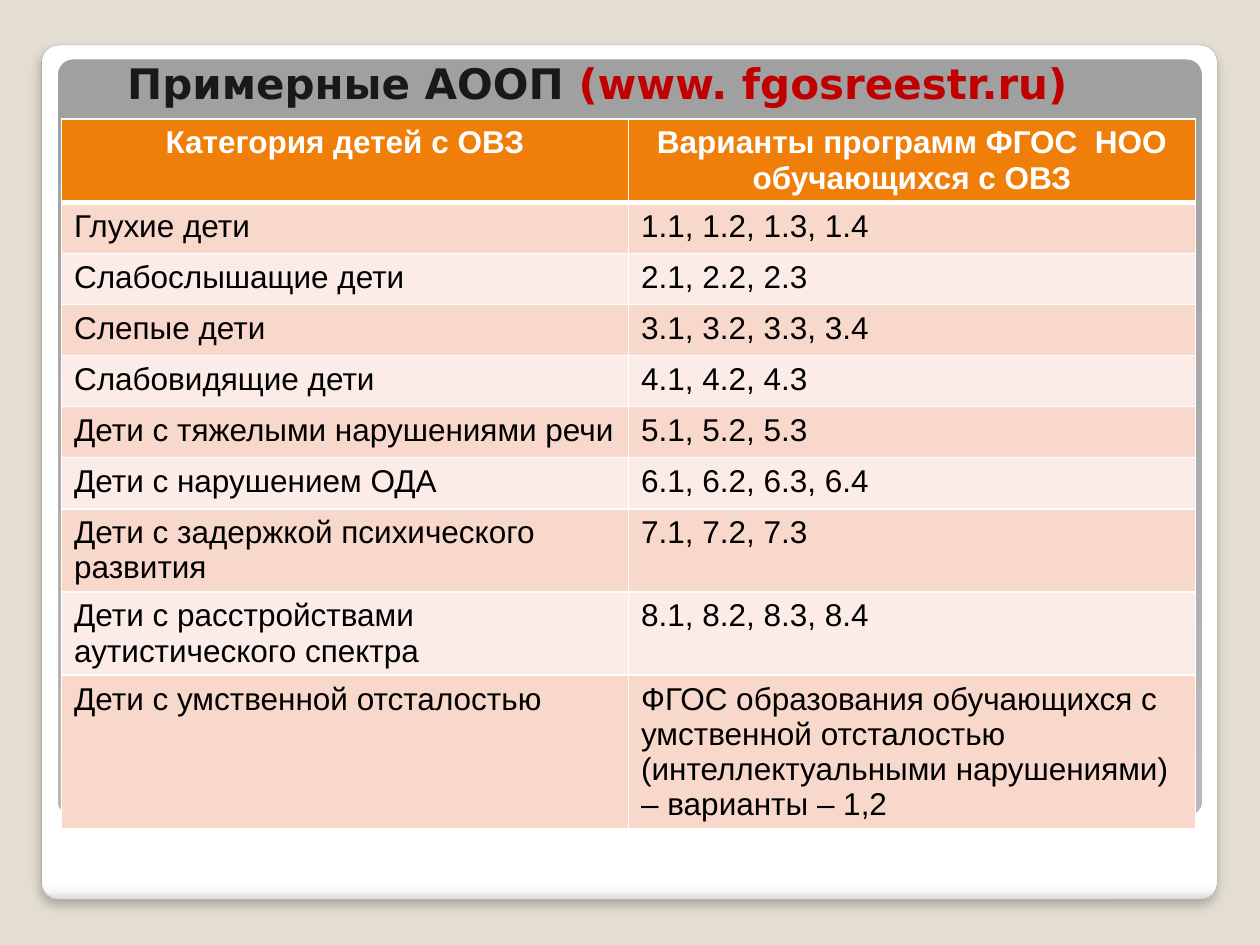
import lxml.etree
import pptx
import pptx.dml.color
import pptx.enum.shapes
import pptx.enum.text
import pptx.oxml
import pptx.oxml.ns
import pptx.util

Cm = pptx.util.Cm
Pt = pptx.util.Pt
RGBColor = pptx.dml.color.RGBColor
Align = pptx.enum.text.PP_ALIGN
qn = pptx.oxml.ns.qn

BEIGE = RGBColor(0xE3, 0xDE, 0xD1)
WHITE = RGBColor(0xFF, 0xFF, 0xFF)
OFF_WHITE = RGBColor(0xF7, 0xF7, 0xF7)
EDGE_GRAY = RGBColor(0xDA, 0xDA, 0xDA)
LINE_GRAY = RGBColor(0xA4, 0xA4, 0xA4)
PANEL_DARK = RGBColor(0xA0, 0xA0, 0xA0)
PANEL_LIGHT = RGBColor(0xB8, 0xB8, 0xB8)
BLACK = RGBColor(0, 0, 0)
CHARCOAL = RGBColor(0x19, 0x19, 0x19)
RED = RGBColor(0xC0, 0, 0)
ORANGE = RGBColor(0xF0, 0x7F, 0x09)
BAND_COLORS = (RGBColor(0xF9, 0xD8, 0xCC), RGBColor(0xFC, 0xEC, 0xE7))

ROWS = (
    ("Категория детей с ОВЗ", "Варианты программ ФГОС  НОО обучающихся с ОВЗ"),
    ("Глухие дети", "1.1, 1.2, 1.3, 1.4"),
    ("Слабослышащие дети", "2.1, 2.2, 2.3"),
    ("Слепые дети", "3.1, 3.2, 3.3, 3.4"),
    ("Слабовидящие дети", "4.1, 4.2, 4.3"),
    ("Дети с тяжелыми нарушениями речи", "5.1, 5.2, 5.3"),
    ("Дети с нарушением ОДА", "6.1, 6.2, 6.3, 6.4"),
    ("Дети с задержкой психического развития", "7.1, 7.2, 7.3"),
    ("Дети с расстройствами аутистического спектра", "8.1, 8.2, 8.3, 8.4"),
    ("Дети с умственной отсталостью",
     "ФГОС образования обучающихся с умственной отсталостью "
     "(интеллектуальными нарушениями) – варианты – 1,2"),
)


def add_run(paragraph, text, font_name, size, color, bold=False):
    run = paragraph.add_run()
    run.text = text
    run.font.name = font_name
    run.font.size = Pt(size)
    run.font.bold = bold
    run.font.color.rgb = color


def set_vertical_gradient(shape, stops):
    """Fill from top to bottom with (percent, colour) stops."""
    shape.fill.gradient()
    shape.fill.gradient_angle = 270
    stop_list = shape._element.spPr.find(".//" + qn("a:gsLst"))
    for stop in list(stop_list):
        stop_list.remove(stop)
    for percent, color in stops:
        stop = lxml.etree.SubElement(stop_list, qn("a:gs"), pos=str(percent * 1000))
        lxml.etree.SubElement(stop, qn("a:srgbClr"), val=str(color))


def add_panel(slide, left, top, width, height, stops):
    panel = slide.shapes.add_shape(
        pptx.enum.shapes.MSO_SHAPE.ROUNDED_RECTANGLE,
        Cm(left), Cm(top), Cm(width), Cm(height))
    panel.adjustments[0] = 0.02
    panel.shadow.inherit = False
    panel.line.fill.background()
    set_vertical_gradient(panel, stops)
    return panel


def add_soft_shadow(shape):
    effects = shape._element.spPr.find(qn("a:effectLst"))
    shadow = lxml.etree.SubElement(
        effects, qn("a:outerShdw"), blurRad=str(Pt(6)), dist=str(Pt(4)),
        dir="5400000", algn="t", rotWithShape="0")
    color = lxml.etree.SubElement(shadow, qn("a:srgbClr"), val=str(BLACK))
    lxml.etree.SubElement(color, qn("a:alpha"), val="25000")


def format_title(title):
    title.left, title.top = Cm(2.31), Cm(0.13)
    title.width, title.height = Cm(23.6), Cm(3.17)
    frame = title.text_frame
    frame.auto_size = pptx.enum.text.MSO_AUTO_SIZE.NONE
    frame.vertical_anchor = pptx.enum.text.MSO_ANCHOR.BOTTOM
    frame.margin_bottom = Cm(1.12)
    paragraph = frame.paragraphs[0]
    paragraph.alignment = Align.LEFT
    add_run(paragraph, "Примерные АООП ", "DejaVu Sans", 24, CHARCOAL, True)
    add_run(paragraph, "(www. fgosreestr.ru)", "DejaVu Sans", 24, RED, True)


def set_borders(cell, bottom_width):
    properties = cell._tc.get_or_add_tcPr()
    widths = (("a:lnL", 1), ("a:lnR", 1), ("a:lnT", 1), ("a:lnB", bottom_width))
    for index, (tag, width) in enumerate(widths):
        line = lxml.etree.Element(qn(tag), w=str(Pt(width)))
        fill = lxml.etree.SubElement(line, qn("a:solidFill"))
        lxml.etree.SubElement(fill, qn("a:srgbClr"), val=str(WHITE))
        properties.insert(index, line)


def format_cell(cell, text, row_index):
    header = row_index == 0
    cell.fill.solid()
    cell.fill.fore_color.rgb = ORANGE if header else BAND_COLORS[(row_index - 1) % 2]
    set_borders(cell, 3 if header else 1)
    paragraph = cell.text_frame.paragraphs[0]
    paragraph.alignment = Align.CENTER if header else Align.LEFT
    add_run(paragraph, text, "Arial", 18, WHITE if header else BLACK, header)


def add_program_table(slide):
    table = slide.shapes.add_table(
        len(ROWS), 2, Cm(1.24), Cm(2.4), Cm(22.86), Cm(1.03) * len(ROWS)).table
    for row_index, texts in enumerate(ROWS):
        for column_index, text in enumerate(texts):
            format_cell(table.cell(row_index, column_index), text, row_index)


def main():
    presentation = pptx.Presentation()
    presentation.slide_width, presentation.slide_height = Cm(25.4), Cm(19.05)
    slide = presentation.slides.add_slide(presentation.slide_layouts[5])
    slide.background.fill.solid()
    slide.background.fill.fore_color.rgb = BEIGE

    card = add_panel(slide, 0.84, 0.91, 23.7, 17.22,
                     ((0, WHITE), (98, WHITE), (99, OFF_WHITE), (100, EDGE_GRAY)))
    card.line.color.rgb = LINE_GRAY
    card.line.width = Pt(0.16)
    add_soft_shadow(card)
    add_panel(slide, 1.17, 1.2, 23.06, 15.24, ((0, PANEL_DARK), (100, PANEL_LIGHT)))

    title = slide.shapes.title
    format_title(title)
    slide.shapes._spTree.append(title._element)
    add_program_table(slide)
    presentation.save("out.pptx")


if __name__ == "__main__":
    main()
